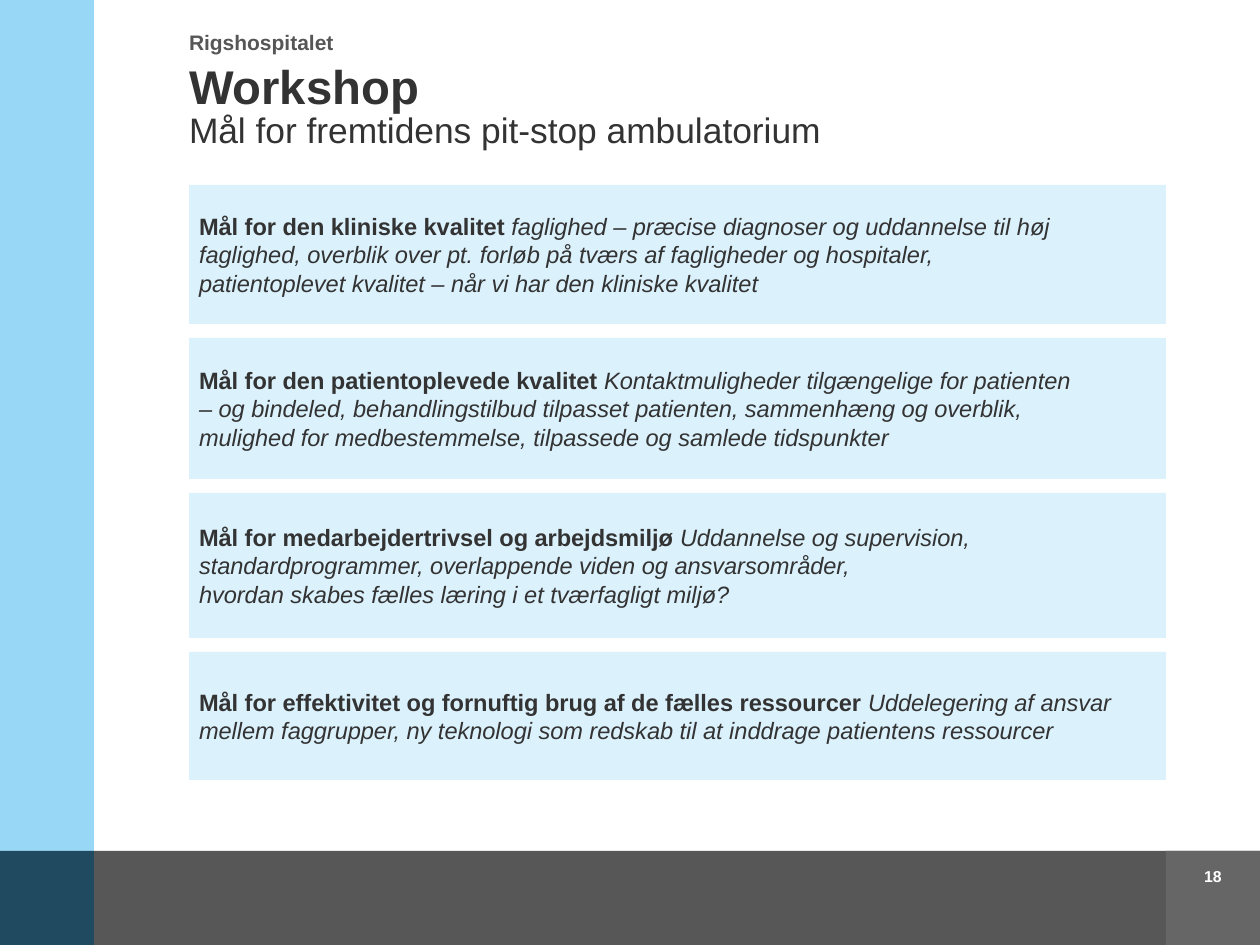
from pptx import Presentation
from pptx import util as u
from pptx.dml.color import RGBColor
from pptx.enum import shapes, text

PX = 914400 / 126
FONT = "Arial"
WHITE = RGBColor(0xFF, 0xFF, 0xFF)
INK = RGBColor(0x33, 0x33, 0x33)
GREY = RGBColor(0x56, 0x56, 0x56)
BAR = RGBColor(0x57, 0x57, 0x57)
CORNER = RGBColor(0x66, 0x66, 0x66)
SKY = RGBColor(0x99, 0xD7, 0xF6)
NAVY = RGBColor(0x1F, 0x4A, 0x60)
PALE = RGBColor(0xDB, 0xF1, 0xFC)

GOALS = [
    (139, "Mål for den kliniske kvalitet ",
     ["faglighed – præcise diagnoser og uddannelse til høj faglighed, "
      "overblik over pt. forløb på tværs af fagligheder og hospitaler,",
      "patientoplevet kvalitet – når vi har den kliniske kvalitet"]),
    (141, "Mål for den patientoplevede kvalitet ",
     ["Kontaktmuligheder tilgængelige for patienten",
      "– og bindeled, behandlingstilbud tilpasset patienten, "
      "sammenhæng og overblik,",
      "mulighed for medbestemmelse, tilpassede og samlede tidspunkter"]),
    (145, "Mål for medarbejdertrivsel og arbejdsmiljø ",
     ["Uddannelse og supervision, standardprogrammer, "
      "overlappende viden og ansvarsområder,",
      "hvordan skabes fælles læring i et tværfagligt miljø?"]),
    (128, "Mål for effektivitet og fornuftig brug af de fælles ressourcer ",
     ["Uddelegering af ansvar mellem faggrupper, ny teknologi som "
      "redskab til at inddrage patientens ressourcer"]),
]


def px(n):
    return u.Emu(round(n * PX))


def rect(slide, x, y, w, h, fill):
    box = slide.shapes.add_shape(
        shapes.MSO_SHAPE.RECTANGLE, px(x), px(y), px(w), px(h))
    box.shadow.inherit = False
    box.fill.solid()
    box.fill.fore_color.rgb = fill
    box.line.fill.background()
    return box


def frame(shape, pad=0, anchor=text.MSO_ANCHOR.TOP, align=text.PP_ALIGN.LEFT):
    tf = shape.text_frame
    tf.word_wrap = True
    tf.vertical_anchor = anchor
    tf.margin_left = tf.margin_right = px(pad)
    tf.margin_top = tf.margin_bottom = px(pad)
    para = tf.paragraphs[0]
    para.alignment = align
    return para


def label(slide, x, y, w, h, align=text.PP_ALIGN.LEFT):
    box = slide.shapes.add_textbox(px(x), px(y), px(w), px(h))
    return frame(box, align=align)


def add_run(para, words, size, color=INK, bold=False, italic=False):
    run = para.add_run()
    run.text = words
    font = run.font
    font.name, font.size = FONT, u.Pt(size)
    font.bold, font.italic = bold, italic
    font.color.rgb = color


def draw_base(slide, x, y, w, h, side=94):
    foot = y + h - side
    rect(slide, x + side, foot, w - side, side, BAR)
    rect(slide, x + w - side, foot, side, side, CORNER)
    rect(slide, x, y, side, h - side, SKY)
    rect(slide, x, foot, side, side, NAVY)
    para = label(slide, x + w - side, foot + 16, side, 20,
                 text.PP_ALIGN.CENTER)
    add_run(para, "18", 9, WHITE, bold=True)


def draw_head(slide, x, y, w, h):
    para = label(slide, x, y, 323, 30)
    add_run(para, "Rigshospitalet", 12, GREY, bold=True)
    para = label(slide, x, y + 37, w, h - 37)
    para.line_spacing = 0.85
    add_run(para, "Workshop", 27, bold=True)
    para.add_line_break()
    add_run(para, "Mål for fremtidens pit-stop ambulatorium", 20.2)


def draw_goals(slide, x, y, w, gap=14):
    for h, name, lines in GOALS:
        box = rect(slide, x, y, w, h, PALE)
        para = frame(box, 10, text.MSO_ANCHOR.MIDDLE)
        add_run(para, name, 13.5, bold=True)
        for i, line in enumerate(lines):
            if i:
                para.add_line_break()
            add_run(para, line, 13.5, italic=True)
        y += h + gap


def main():
    deck = Presentation()
    deck.slide_width, deck.slide_height = px(1260), px(945)
    slide = deck.slides.add_slide(deck.slide_layouts[6])
    draw_base(slide, 0, 0, 1260, 945)
    draw_head(slide, 189, 29, 977, 155)
    draw_goals(slide, 189, 185, 977)
    deck.save("out.pptx")


if __name__ == "__main__":
    main()
